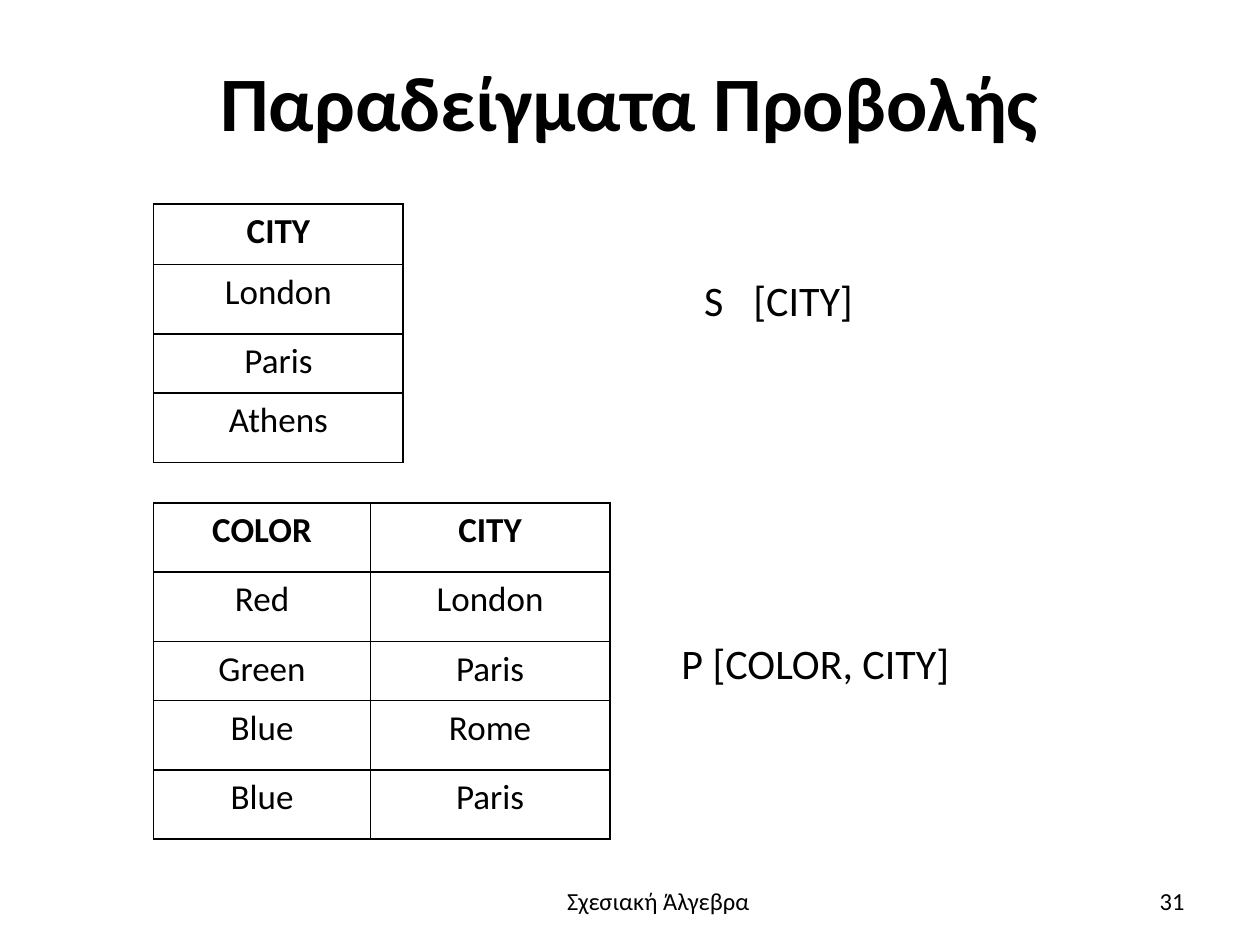
import pptx
import pptx.util
from pptx.dml.color import RGBColor
from pptx.enum.text import MSO_ANCHOR, PP_ALIGN
from pptx.oxml.ns import qn
from lxml import etree

Inches = pptx.util.Inches
Pt = pptx.util.Pt
LEFT, CENTER, RIGHT = PP_ALIGN.LEFT, PP_ALIGN.CENTER, PP_ALIGN.RIGHT
TOP, MIDDLE = MSO_ANCHOR.TOP, MSO_ANCHOR.MIDDLE
FONT = "Calibri"
BLACK = "000000"

TITLE = "Παραδείγματα Προβολής"
FOOTER = "Σχεσιακή Άλγεβρα"
PAGE_NUMBER = "31"
TABLE_LEFT = 1.22
TABLES = [
    {
        "top": 1.62,
        "columns": [1.98],
        "heights": [0.48, 0.55, 0.47, 0.55],
        "rows": [["CITY"], ["London"], ["Paris"], ["Athens"]],
    },
    {
        "top": 3.99,
        "columns": [1.72, 1.9],
        "heights": [0.55, 0.55, 0.47, 0.55, 0.55],
        "rows": [
            ["COLOR", "CITY"],
            ["Red", "London"],
            ["Green", "Paris"],
            ["Blue", "Rome"],
            ["Blue", "Paris"],
        ],
    },
]
EXPRESSIONS = [
    ("S\t[CITY]", (5.49, 2.13, 1.64, 0.5)),
    ("P [COLOR, CITY]", (5.31, 5.01, 2.77, 0.5)),
]
EXPRESSION_TAB = 0.39


def color(value):
    return RGBColor.from_string(value)


def write(frame, text, size=20, bold=False, align=LEFT, spacing=None, tab=None):
    paragraph = frame.paragraphs[0]
    paragraph.alignment = align
    if spacing:
        paragraph.line_spacing = spacing
    if tab:
        tabs = etree.SubElement(paragraph._p.get_or_add_pPr(), qn("a:tabLst"))
        etree.SubElement(tabs, qn("a:tab"), pos=str(Inches(tab)), algn="l")
    run = paragraph.add_run()
    run.text = text
    run.font.name = FONT
    run.font.size = Pt(size)
    run.font.bold = bold
    run.font.color.rgb = color(BLACK)


def add_text(slide, text, box, anchor=MIDDLE, margins=None, **text_format):
    shape = slide.shapes.add_textbox(*map(Inches, box))
    frame = shape.text_frame
    frame.word_wrap = True
    frame.vertical_anchor = anchor
    if margins:
        frame.margin_left, frame.margin_top, frame.margin_right, frame.margin_bottom = map(
            Inches, margins
        )
    write(frame, text, **text_format)


def outline(cell):
    properties = cell._tc.get_or_add_tcPr()
    for index, side in enumerate(("lnL", "lnR", "lnT", "lnB")):
        line = etree.Element(qn("a:" + side), w=str(Pt(1)))
        fill = etree.SubElement(line, qn("a:solidFill"))
        etree.SubElement(fill, qn("a:srgbClr"), val=BLACK)
        properties.insert(index, line)


def add_relation(slide, top, columns, heights, rows):
    size = (TABLE_LEFT, top, sum(columns), sum(heights))
    table = slide.shapes.add_table(len(rows), len(columns), *map(Inches, size)).table
    table.horz_banding = False
    for column, width in zip(table.columns, columns):
        column.width = Inches(width)
    for row_index, (row, height) in enumerate(zip(rows, heights)):
        table.rows[row_index].height = Inches(height)
        for column_index, text in enumerate(row):
            cell = table.cell(row_index, column_index)
            cell.fill.background()
            outline(cell)
            write(cell.text_frame, text, bold=row_index == 0, align=CENTER)


def main():
    presentation = pptx.Presentation()
    presentation.slide_width = Inches(10)
    presentation.slide_height = Inches(7.5)
    slide = presentation.slides.add_slide(presentation.slide_layouts[6])
    add_text(slide, TITLE, (0.51, 0.13, 8.98, 1.38), margins=(0, 0.02, 0, 0),
             size=44, bold=True, align=CENTER, spacing=0.98)
    for relation in TABLES:
        add_relation(slide, **relation)
    for text, box in EXPRESSIONS:
        add_text(slide, text, box, size=24, tab=EXPRESSION_TAB if "\t" in text else None)
    add_text(slide, FOOTER, (3.48, 6.98, 3.49, 0.55), anchor=TOP, size=14, align=CENTER)
    add_text(slide, PAGE_NUMBER, (7.17, 6.95, 2.33, 0.4), size=14, align=RIGHT)
    presentation.save("out.pptx")


if __name__ == "__main__":
    main()
